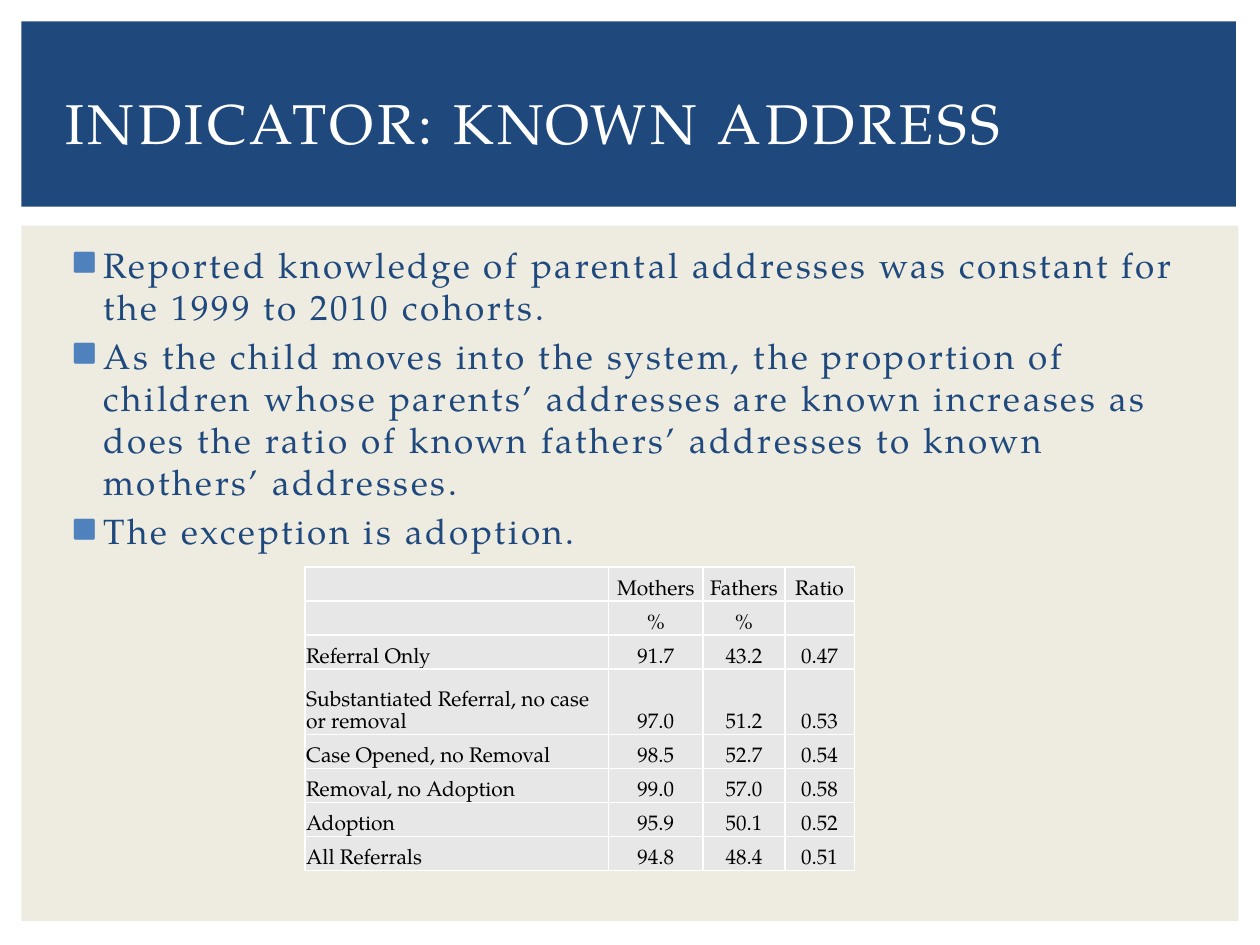
import pptx
import pptx.util
import pptx.dml.color
import pptx.enum.shapes
import pptx.enum.text
import pptx.oxml.ns
import lxml.etree

Inches, Pt = pptx.util.Inches, pptx.util.Pt
PP_ALIGN = pptx.enum.text.PP_ALIGN
ANCHOR = pptx.enum.text.MSO_ANCHOR
FONT = "TeX Gyre Pagella"
COLORS = {"navy": "1F497D", "blue": "4F81BD", "cream": "EEECE1",
          "white": "FFFFFF", "black": "000000", "cell": "E7E7E7"}

TITLE = "INDICATOR: KNOWN ADDRESS"
FINDINGS = [
    "Reported knowledge of parental addresses was constant for the 1999 to 2010 cohorts.",
    "As the child moves into the system, the proportion of children whose parents’ addresses "
    "are known increases as does the ratio of known fathers’ addresses to known mothers’ addresses.",
    "The exception is adoption.",
]
ADDRESS_RATES = [
    ("", "Mothers", "Fathers", "Ratio"),
    ("", "%", "%", ""),
    ("Referral Only", "91.7", "43.2", "0.47"),
    ("Substantiated Referral, no case or removal", "97.0", "51.2", "0.53"),
    ("Case Opened, no Removal", "98.5", "52.7", "0.54"),
    ("Removal, no Adoption", "99.0", "57.0", "0.58"),
    ("Adoption", "95.9", "50.1", "0.52"),
    ("All Referrals", "94.8", "48.4", "0.51"),
]
COLUMN_WIDTHS = [2.41, 0.75, 0.65, 0.55]
ROW_HEIGHT, TALL_ROW_HEIGHT, TALL_ROW = 0.27, 0.52, 3


def rgb(name):
    return pptx.dml.color.RGBColor.from_string(COLORS[name])


def add_xml(parent, tag, **attributes):
    return lxml.etree.SubElement(parent, pptx.oxml.ns.qn(tag), attributes)


def add_run(paragraph, text, size, color, spacing=0):
    """Add a styled run; spacing is the letter spacing in points."""
    run = paragraph.add_run()
    run.text = text
    run.font.name, run.font.size = FONT, Pt(size)
    run.font.color.rgb = rgb(color)
    if spacing:
        run.font._element.set("spc", str(int(spacing * 100)))


def place(shape, box):
    shape.left, shape.top, shape.width, shape.height = map(Inches, box)


def add_band(slide, box, color, depth):
    """Draw a plain background band at the given depth, behind the text."""
    band = slide.shapes.add_shape(pptx.enum.shapes.MSO_SHAPE.RECTANGLE, *map(Inches, box))
    band.shadow.inherit = False
    band.fill.solid()
    band.fill.fore_color.rgb = rgb(color)
    band.line.fill.background()
    slide.shapes._spTree.insert(2 + depth, band._element)


def fill_title(title, box):
    place(title, box)
    frame = title.text_frame
    frame.auto_size = pptx.enum.text.MSO_AUTO_SIZE.NONE
    frame.vertical_anchor = ANCHOR.MIDDLE
    frame.paragraphs[0].alignment = PP_ALIGN.LEFT
    add_run(frame.paragraphs[0], TITLE, 32, "white", 2)


def fill_findings(body, box):
    place(body, box)
    frame = body.text_frame
    frame.auto_size = pptx.enum.text.MSO_AUTO_SIZE.NONE
    for index, finding in enumerate(FINDINGS):
        paragraph = frame.add_paragraph() if index else frame.paragraphs[0]
        paragraph.space_before, paragraph.line_spacing = Pt(4), Pt(24)
        properties = paragraph._p.get_or_add_pPr()
        properties.set("marL", str(Inches(0.3)))
        properties.set("indent", str(Inches(-0.25)))
        bullet_color = add_xml(properties, "a:buClr")
        add_xml(bullet_color, "a:srgbClr", val=COLORS["blue"])
        add_xml(properties, "a:buFont", typeface=FONT)
        add_xml(properties, "a:buChar", char="■")
        add_run(paragraph, finding, 20, "navy", 1.5)


def style_cell(cell, text, alignment):
    cell.margin_left = cell.margin_right = cell.margin_top = Inches(0.01)
    cell.margin_bottom = 0
    cell.vertical_anchor = ANCHOR.BOTTOM
    for side in ("a:lnL", "a:lnR", "a:lnT", "a:lnB"):
        border = add_xml(cell._tc.get_or_add_tcPr(), side, w=str(Pt(1)))
        add_xml(add_xml(border, "a:solidFill"), "a:srgbClr", val=COLORS["white"])
    cell.fill.solid()
    cell.fill.fore_color.rgb = rgb("cell")
    paragraph = cell.text_frame.paragraphs[0]
    paragraph.alignment, paragraph.line_spacing = alignment, Pt(12.6)
    if text:
        add_run(paragraph, text, 12, "black")
    else:
        add_xml(paragraph._p, "a:endParaRPr", sz="1200")


def add_rates_table(slide, left, top):
    heights = [TALL_ROW_HEIGHT if row == TALL_ROW else ROW_HEIGHT
               for row in range(len(ADDRESS_RATES))]
    box = (left, top, sum(COLUMN_WIDTHS), sum(heights))
    table = slide.shapes.add_table(len(heights), len(COLUMN_WIDTHS), *map(Inches, box)).table
    for column, width in zip(table.columns, COLUMN_WIDTHS):
        column.width = Inches(width)
    for row, height, texts in zip(table.rows, heights, ADDRESS_RATES):
        row.height = Inches(height)
        for index, (cell, text) in enumerate(zip(row.cells, texts)):
            style_cell(cell, text, PP_ALIGN.CENTER if index else PP_ALIGN.LEFT)


def main():
    deck = pptx.Presentation()
    deck.slide_width, deck.slide_height = Inches(10), Inches(7.5)
    slide = deck.slides.add_slide(deck.slide_layouts[1])
    add_band(slide, (0.17, 1.79, 9.66, 5.52), "cream", 0)
    add_band(slide, (0.17, 0.17, 9.64, 1.47), "navy", 1)
    fill_title(slide.shapes.title, (0.42, 0.39, 9.17, 1.15))
    fill_findings(slide.placeholders[1], (0.42, 1.88, 9.19, 4.82))
    add_rates_table(slide, 2.42, 4.5)
    deck.save("out.pptx")


if __name__ == "__main__":
    main()
